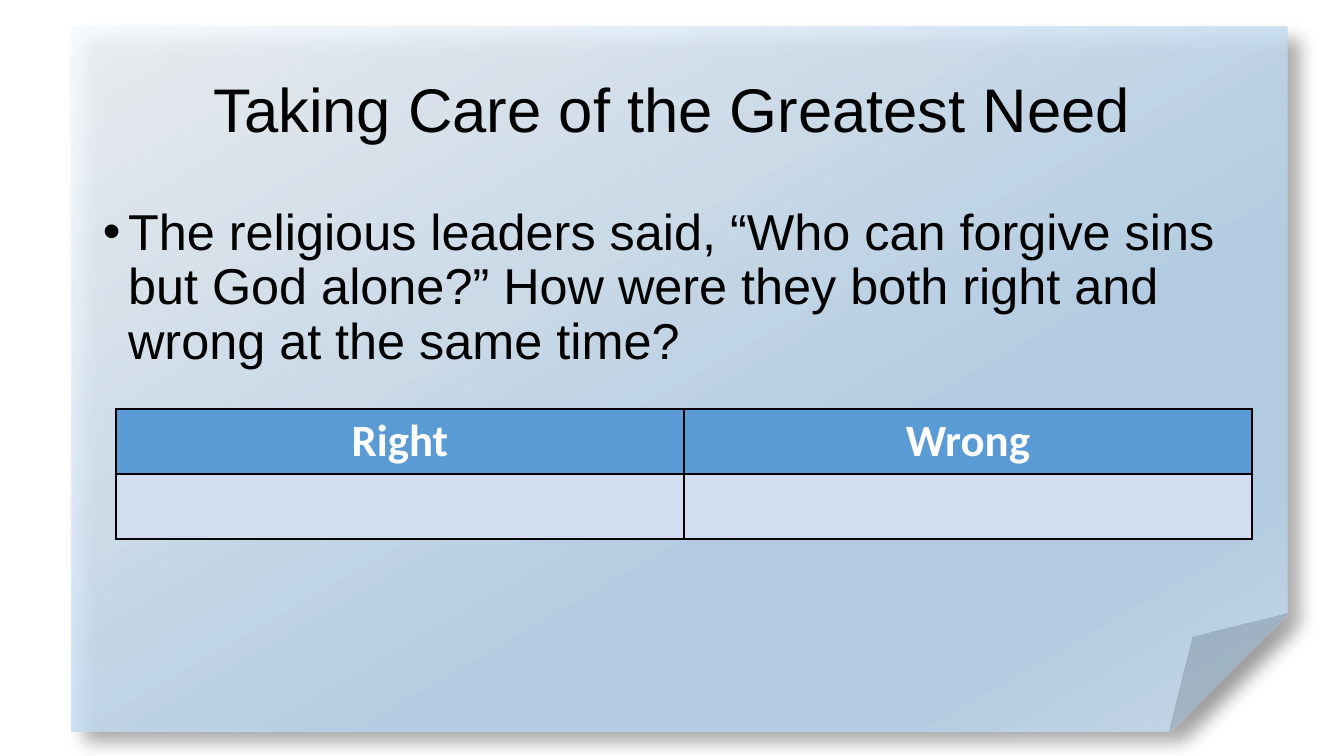
from dataclasses import dataclass

import pptx
import pptx.dml.color
import pptx.enum.shapes
import pptx.enum.text
import pptx.oxml
import pptx.oxml.ns
import pptx.util
from lxml import etree

PX = 914400 / 100.8
BLACK, WHITE = "000000", "FFFFFF"
ALIGN = pptx.enum.text.PP_ALIGN
ANCHOR = pptx.enum.text.MSO_ANCHOR


@dataclass(frozen=True)
class Area:
    left: int
    top: int
    width: int
    height: int

    def emu(self) -> tuple[pptx.util.Emu, ...]:
        return tuple(px(n) for n in (self.left, self.top, self.width, self.height))


@dataclass(frozen=True)
class GradientStop:
    position: int
    color: str
    opacity: int


@dataclass(frozen=True)
class TableRow:
    texts: tuple[str, ...]
    fill: str


PAPER = Area(72, 27, 1215, 704)
TITLE = Area(93, 40, 1159, 146)
BODY = Area(93, 202, 1159, 480)
TABLE = Area(116, 409, 1136, 130)

PAPER_STOPS = (
    GradientStop(0, "F7FAFD", 83),
    GradientStop(64, "B5D2EC", 84),
    GradientStop(83, "B5D2EC", 84),
    GradientStop(100, "CEE1F2", 83),
)
ROWS = (TableRow(("Right", "Wrong"), "5B9BD5"), TableRow(("", ""), "D2DEEF"))


def px(count: int) -> pptx.util.Emu:
    return pptx.util.Emu(round(count * PX))


def rgb(color: str) -> pptx.dml.color.RGBColor:
    return pptx.dml.color.RGBColor.from_string(color)


def element(xml: str) -> etree._Element:
    """Parse one drawing element, adding the namespace to its root tag."""
    tag, rest = xml.split(" ", 1)
    return pptx.oxml.parse_xml(f"{tag} {pptx.oxml.ns.nsdecls('a')} {rest}")


def add_span(para, text: str, size: int, font: str, color: str, bold: bool = False) -> None:
    span = para.add_run()
    span.text = text
    span.font.size = pptx.util.Pt(size)
    span.font.name = font
    span.font.bold = bold
    span.font.color.rgb = rgb(color)


def draw_paper(page) -> None:
    paper = page.shapes.add_shape(
        pptx.enum.shapes.MSO_SHAPE.FOLDED_CORNER, *PAPER.emu())
    paper.line.fill.background()
    paper.shadow.inherit = False
    stops = "".join(
        f'<a:gs pos="{stop.position * 1000}"><a:srgbClr val="{stop.color}">'
        f'<a:alpha val="{stop.opacity * 1000}"/></a:srgbClr></a:gs>'
        for stop in PAPER_STOPS)
    gradient = element(
        f'<a:gradFill rotWithShape="1"><a:gsLst>{stops}</a:gsLst>'
        '<a:lin ang="3600000" scaled="0"/></a:gradFill>')
    properties = paper.element.spPr
    properties.find(pptx.oxml.ns.qn("a:prstGeom")).addnext(gradient)
    blur = distance = pptx.util.Pt(13)
    properties.find(pptx.oxml.ns.qn("a:effectLst")).append(element(
        f'<a:outerShdw blurRad="{blur}" dist="{distance}" dir="2700000" algn="tl" '
        f'rotWithShape="0"><a:srgbClr val="{BLACK}"><a:alpha val="40000"/>'
        '</a:srgbClr></a:outerShdw>'))


def draw_text(box, area: Area, text: str, size: int, align, anchor):
    box.left, box.top, box.width, box.height = area.emu()
    frame = box.text_frame
    frame.word_wrap = True
    frame.auto_size = pptx.enum.text.MSO_AUTO_SIZE.NONE
    frame.vertical_anchor = anchor
    para = frame.paragraphs[0]
    para.alignment = align
    para.line_spacing = 0.9
    add_span(para, text, size, "Arial", BLACK)
    return para


def add_bullet(para) -> None:
    properties = para._p.get_or_add_pPr()
    indent = pptx.util.Inches(0.25)
    properties.set("marL", str(indent))
    properties.set("indent", str(-indent))
    properties.append(element('<a:buFont typeface="Arial"/>'))
    properties.append(element('<a:buChar char="•"/>'))


def add_borders(cell) -> None:
    properties = cell._tc.get_or_add_tcPr()
    for index, side in enumerate(("lnL", "lnR", "lnT", "lnB")):
        properties.insert(index, element(
            f'<a:{side} w="{pptx.util.Pt(1)}"><a:solidFill><a:srgbClr val="{BLACK}"/>'
            f'</a:solidFill></a:{side}>'))


def draw_table(page) -> None:
    columns = len(ROWS[0].texts)
    table = page.shapes.add_table(len(ROWS), columns, *TABLE.emu()).table
    for column in table.columns:
        column.width = px(TABLE.width // columns)
    for row_index, row in enumerate(ROWS):
        table.rows[row_index].height = px(TABLE.height // len(ROWS))
        for column_index, text in enumerate(row.texts):
            cell = table.cell(row_index, column_index)
            cell.fill.solid()
            cell.fill.fore_color.rgb = rgb(row.fill)
            add_borders(cell)
            if text:
                para = cell.text_frame.paragraphs[0]
                para.alignment = ALIGN.CENTER
                add_span(para, text, 32, "Calibri", WHITE, bold=True)


def main() -> None:
    deck = pptx.Presentation()
    deck.slide_width, deck.slide_height = px(1344), px(756)
    page = deck.slides.add_slide(deck.slide_layouts.get_by_name("Title Only"))
    page.background.fill.solid()
    page.background.fill.fore_color.rgb = rgb(WHITE)

    draw_paper(page)
    title = page.shapes.title
    page.shapes._spTree.append(title.element)  # bring the title above the paper
    draw_text(title, TITLE, "Taking Care of the Greatest Need", 44,
              ALIGN.CENTER, ANCHOR.MIDDLE)
    question = draw_text(
        page.shapes.add_textbox(*BODY.emu()), BODY,
        "The religious leaders said, “Who can forgive sins but God alone?” "
        "How were they both right and wrong at the same time?",
        36, ALIGN.LEFT, ANCHOR.TOP)
    add_bullet(question)
    draw_table(page)
    deck.save("out.pptx")


if __name__ == "__main__":
    main()
